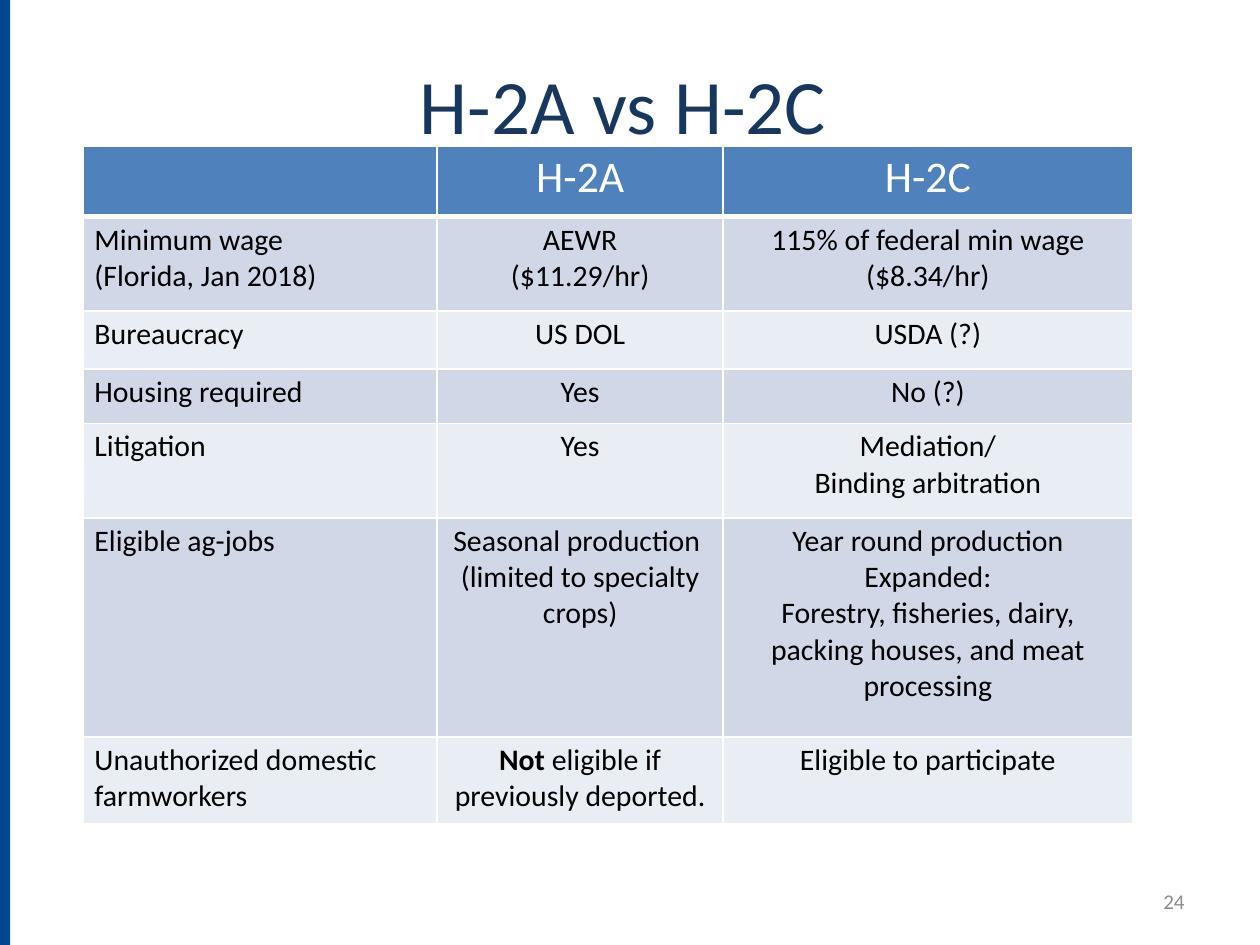
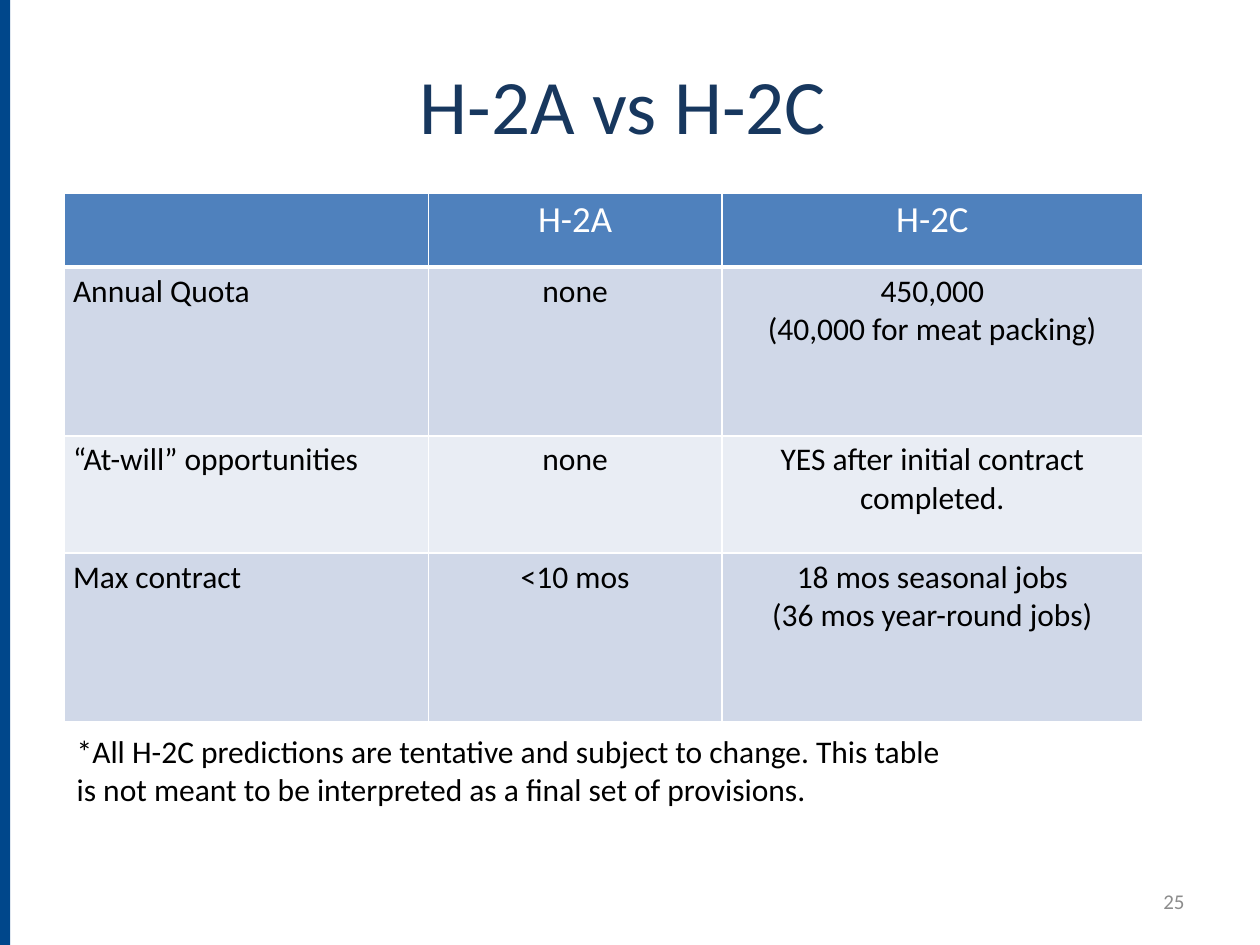
from dataclasses import dataclass

from lxml import etree
from pptx import Presentation
from pptx.dml.color import RGBColor
from pptx.enum.shapes import MSO_SHAPE
from pptx.enum.text import MSO_ANCHOR, MSO_AUTO_SIZE, PP_ALIGN
from pptx.oxml.ns import qn
from pptx.slide import Slide
from pptx.table import _Cell
from pptx.text.text import TextFrame
from pptx.util import Inches, Pt

RECTANGLE = MSO_SHAPE.RECTANGLE
MIDDLE = MSO_ANCHOR.MIDDLE
NO_AUTOFIT = MSO_AUTO_SIZE.NONE
LEFT, CENTER, RIGHT = PP_ALIGN.LEFT, PP_ALIGN.CENTER, PP_ALIGN.RIGHT

FONT = "Calibri"
BAR_BLUE = RGBColor(0x00, 0x47, 0x8B)
TITLE_NAVY = RGBColor(0x17, 0x37, 0x5E)
NUMBER_GRAY = RGBColor(0x8C, 0x8C, 0x8C)
HEADER_BLUE = RGBColor(0x4F, 0x81, 0xBD)
BAND_DARK = RGBColor(0xD0, 0xD8, 0xE8)
BAND_LIGHT = RGBColor(0xE9, 0xED, 0xF4)
WHITE = RGBColor(0xFF, 0xFF, 0xFF)
BLACK = RGBColor(0x00, 0x00, 0x00)

TITLE_ONLY_LAYOUT = 5
TITLE = "H-2A vs H-2C"
HEADER = ("", "H-2A", "H-2C")
BOLD_MARK = "**"


@dataclass(frozen=True)
class ComparisonTable:
    left: float
    top: float
    column_widths: tuple[float, ...]
    row_heights: tuple[float, ...]
    side_margin: float
    header_size: int
    body_size: int
    rows: tuple[tuple[str, str, str], ...]


@dataclass(frozen=True)
class ComparisonSlide:
    number: int
    table: ComparisonTable
    footnote: str = ""


SLIDES = (
    ComparisonSlide(24, ComparisonTable(
        left=0.66, top=1.16,
        column_widths=(2.81, 2.27, 3.25),
        row_heights=(0.56, 0.75, 0.46, 0.43, 0.75, 1.74, 0.69),
        side_margin=0.09, header_size=25, body_size=17,
        rows=(
            ("Minimum wage\n(Florida, Jan 2018)", "AEWR\n($11.29/hr)",
             "115% of federal min wage\n($8.34/hr)"),
            ("Bureaucracy", "US DOL", "USDA (?)"),
            ("Housing required", "Yes", "No (?)"),
            ("Litigation", "Yes", "Mediation/\nBinding arbitration"),
            ("Eligible ag-jobs",
             "Seasonal production \n(limited to specialty crops)",
             "Year round production\nExpanded:\n"
             "Forestry, fisheries, dairy, packing houses, and meat processing"),
            ("Unauthorized domestic farmworkers",
             "**Not** eligible if previously deported.",
             "Eligible to participate"),
        ),
    )),
    ComparisonSlide(25, ComparisonTable(
        left=0.51, top=1.53,
        column_widths=(2.89, 2.33, 3.34),
        row_heights=(0.59, 1.34, 0.93, 1.34),
        side_margin=0.07, header_size=21, body_size=18,
        rows=(
            ("Annual Quota", "none", "450,000\n(40,000 for meat packing)"),
            ("“At-will” opportunities", "none",
             "YES after initial contract completed."),
            ("Max contract", "<10 mos",
             "18 mos seasonal jobs\n(36 mos year-round jobs)"),
        ),
    ), footnote="*All H-2C predictions are tentative and subject to change. "
                "This table is not meant to be interpreted as a final set of "
                "provisions."),
)


def write_text(frame: TextFrame, text: str, size: int, color: RGBColor,
               align: PP_ALIGN = LEFT) -> None:
    """Write one paragraph per line; text between bold marks is bold."""
    for index, line in enumerate(text.split("\n")):
        para = frame.add_paragraph() if index else frame.paragraphs[0]
        para.alignment = align
        para.font.name = FONT
        para.font.size = Pt(size)
        para.font.color.rgb = color
        for position, part in enumerate(line.split(BOLD_MARK)):
            if part:
                span = para.add_run()
                span.text = part
                if position % 2:
                    span.font.bold = True


def add_text_box(slide: Slide, left: float, top: float, width: float,
                 height: float) -> TextFrame:
    box = slide.shapes.add_textbox(Inches(left), Inches(top),
                                   Inches(width), Inches(height))
    box.text_frame.word_wrap = True
    return box.text_frame


def set_borders(cell: _Cell, bottom: int) -> None:
    """Give the cell white borders, 1 point except at the bottom."""
    properties = cell._tc.get_or_add_tcPr()
    for side, width in (("L", 1), ("R", 1), ("T", 1), ("B", bottom)):
        line = etree.SubElement(properties, qn(f"a:ln{side}"), w=str(Pt(width)))
        fill = etree.SubElement(line, qn("a:solidFill"))
        etree.SubElement(fill, qn("a:srgbClr"), val=str(WHITE))


def add_comparison_table(slide: Slide, spec_table: ComparisonTable) -> None:
    rows = (HEADER, *spec_table.rows)
    table = slide.shapes.add_table(
        len(rows), len(HEADER), Inches(spec_table.left), Inches(spec_table.top),
        Inches(sum(spec_table.column_widths)),
        Inches(sum(spec_table.row_heights))).table
    for column, width in zip(table.columns, spec_table.column_widths):
        column.width = Inches(width)
    for row, height in zip(table.rows, spec_table.row_heights):
        row.height = Inches(height)

    for row_index, texts in enumerate(rows):
        is_header = row_index == 0
        band = BAND_DARK if row_index % 2 else BAND_LIGHT
        for column_index, text in enumerate(texts):
            cell = table.cell(row_index, column_index)
            cell.margin_left = cell.margin_right = Inches(spec_table.side_margin)
            cell.margin_top = cell.margin_bottom = Inches(0.04)
            set_borders(cell, bottom=3 if is_header else 1)
            cell.fill.solid()
            cell.fill.fore_color.rgb = HEADER_BLUE if is_header else band
            write_text(cell.text_frame, text,
                       spec_table.header_size if is_header else spec_table.body_size,
                       WHITE if is_header else BLACK,
                       CENTER if column_index else LEFT)
            if is_header:
                for para in cell.text_frame.paragraphs:
                    para.font.bold = False


def add_frame(slide: Slide, number: int) -> None:
    """Add what the slides share: side bar, title and slide number."""
    bar = slide.shapes.add_shape(RECTANGLE, 0, 0, Inches(0.08), Inches(7.5))
    bar.shadow.inherit = False
    bar.fill.solid()
    bar.fill.fore_color.rgb = BAR_BLUE
    bar.line.fill.background()

    title = slide.shapes.title
    title.left, title.top = Inches(1.57), Inches(0.65)
    title.width, title.height = Inches(6.75), Inches(0.34)
    title.text_frame.auto_size = NO_AUTOFIT
    title.text_frame.vertical_anchor = MIDDLE
    write_text(title.text_frame, TITLE, 44, TITLE_NAVY, CENTER)

    number_frame = add_text_box(slide, 7.17, 6.95, 2.33, 0.4)
    number_frame.vertical_anchor = MIDDLE
    write_text(number_frame, str(number), 12, NUMBER_GRAY, RIGHT)


def main() -> None:
    deck = Presentation()
    deck.slide_width, deck.slide_height = Inches(10), Inches(7.5)
    for page in SLIDES:
        slide = deck.slides.add_slide(deck.slide_layouts[TITLE_ONLY_LAYOUT])
        add_frame(slide, page.number)
        add_comparison_table(slide, page.table)
        if page.footnote:
            footnote_frame = add_text_box(slide, 0.51, 5.76, 7.15, 0.71)
            write_text(footnote_frame, page.footnote, 18, BLACK)
    deck.save("out.pptx")


if __name__ == "__main__":
    main()
